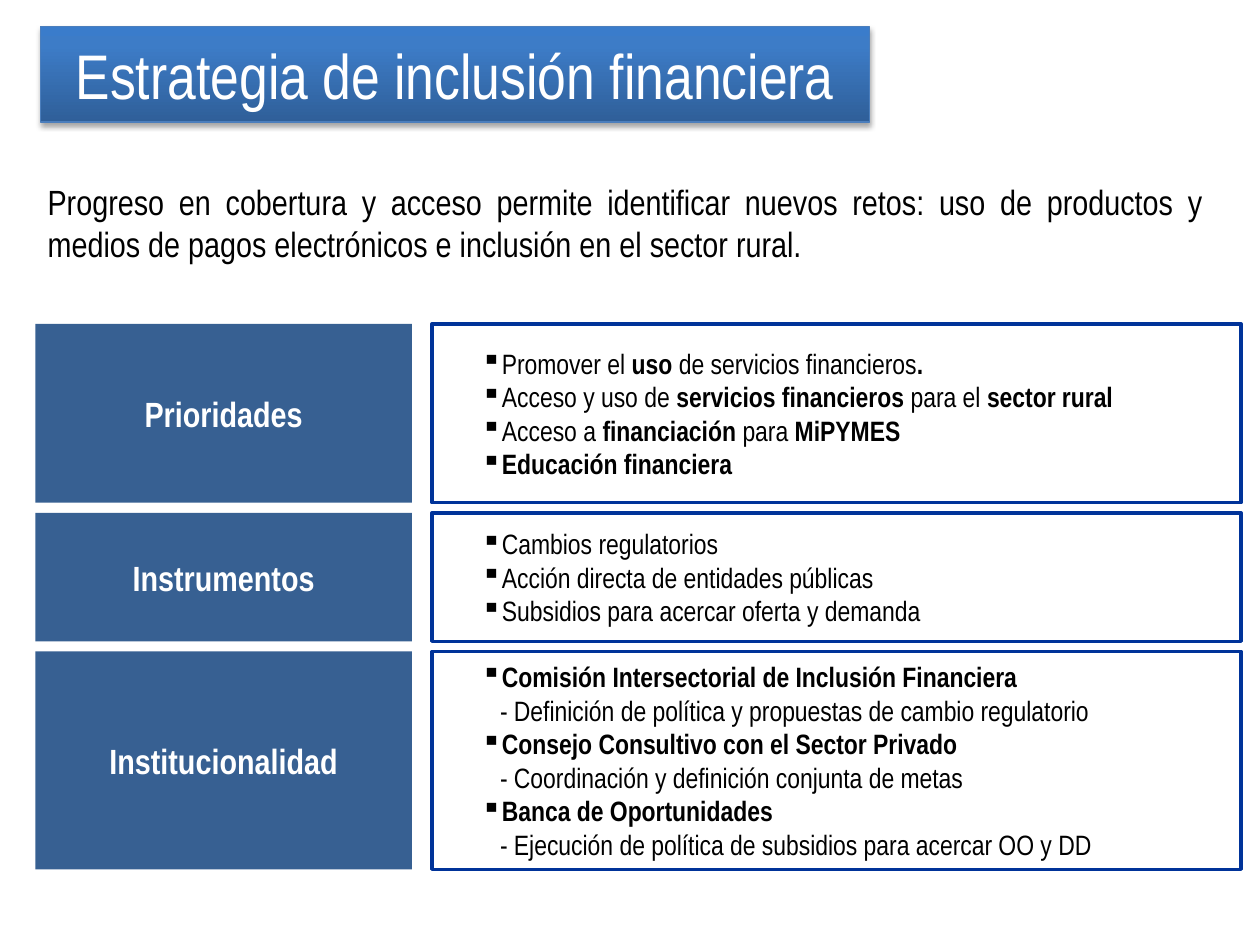
"""Build the slide on the financial inclusion strategy."""
from copy import deepcopy

from pptx import Presentation, util as u
from pptx.dml.color import RGBColor
from pptx.enum import shapes, text
from pptx.oxml import parse_xml
from pptx.oxml.ns import nsdecls, qn

FONT = "Arial Narrow"
LEFT, LABEL_WIDTH, LIST_LEFT, LIST_WIDTH = 0.28, 2.99, 3.43, 6.42
ROWS_TOP, ROW_GAP = 2.57, 0.08
ROWS = [
    ("Prioridades", 1.42, [
        "Promover el *uso* de servicios financieros*.*",
        "Acceso y uso de *servicios financieros* para el *sector rural*",
        "Acceso a *financiación* para *MiPYMES*",
        "*Educación financiera*",
    ]),
    ("Instrumentos", 1.02, [
        "Cambios regulatorios",
        "Acción directa de entidades públicas",
        "Subsidios para acercar oferta y demanda",
    ]),
    ("Institucionalidad", 1.73, [
        "*Comisión Intersectorial de Inclusión Financiera*",
        "- Definición de política y propuestas de cambio regulatorio",
        "*Consejo Consultivo con el Sector Privado*",
        "- Coordinación y definición conjunta de metas",
        "*Banca de Oportunidades*",
        "- Ejecución de política de subsidios para acercar OO y DD",
    ]),
]


def rgb(value):
    return RGBColor.from_string(value)


def add_block(page, area, lines, size, color, align, fill=None):
    """Add a rectangle whose lines mark bold words with asterisks."""
    box = page.shapes.add_shape(shapes.MSO_SHAPE.RECTANGLE, *map(u.Inches, area))
    box.shadow.inherit = False
    box.line.fill.background()
    if fill:
        box.fill.solid()
        box.fill.fore_color.rgb = rgb(fill)
    else:
        box.fill.background()
    frame = box.text_frame
    frame.word_wrap = True
    frame.vertical_anchor = text.MSO_ANCHOR.MIDDLE
    for number, line in enumerate(lines):
        para = frame.paragraphs[0] if number == 0 else frame.add_paragraph()
        para.alignment = align
        for part, words in enumerate(line.split("*")):
            if words:
                span = para.add_run()
                span.text = words
                span.font.bold = part % 2 == 1
        para.font.name = FONT
        para.font.size = u.Pt(size)
        para.font.color.rgb = rgb(color)
    return box


deck = Presentation()
deck.slide_width, deck.slide_height = u.Inches(10), u.Inches(7.5)
page = deck.slides.add_slide(deck.slide_layouts[6])
CENTER, JUSTIFY = text.PP_ALIGN.CENTER, text.PP_ALIGN.JUSTIFY

top = ROWS_TOP
for label, height, items in ROWS:
    panel = add_block(page, (LIST_LEFT, top, LIST_WIDTH, height), items,
                      16, "000000", JUSTIFY, "FFFFFF")
    panel.line.color.rgb = rgb("003399")
    panel.line.width = u.Pt(2)
    for para, item in zip(panel.text_frame.paragraphs, items):
        props = para._p.get_or_add_pPr()
        if item.startswith("-"):
            props.set("marL", str(u.Inches(0.44)))
            continue
        props.set("marL", str(u.Inches(0.41)))
        props.set("indent", str(u.Inches(-0.12)))
        bullet = parse_xml(f'<a:buChar {nsdecls("a")} char="▪"/>')
        props.insert_element_before(bullet, "a:tabLst", "a:defRPr", "a:extLst")
    add_block(page, (LEFT, top, LABEL_WIDTH, height), [f"*{label}*"],
              20, "FFFFFF", CENTER, "376092")
    top += height + ROW_GAP

add_block(page, (LEFT, 1.2, 9.37, 1.13), [
    "Progreso en cobertura y acceso permite identificar nuevos retos: uso de "
    "productos y medios de pagos electrónicos e inclusión en el sector rural."
], 20, "000000", JUSTIFY)

title = add_block(page, (0.32, 0.21, 6.58, 0.76),
                  ["Estrategia de inclusión financiera"], 36, "FFFFFF", CENTER)
title.line.color.rgb = rgb("4B7EBC")
title.line.width = u.Pt(0.75)
title.fill.gradient()
title.fill.gradient_angle = 90
stops = title._element.spPr.find(".//" + qn("a:gsLst"))
stops.append(deepcopy(stops[-1]))
gradient = [(0, "2F5F99"), (0.8, "3D7CC7"), (1, "3A7CCB")]
for stop, (position, color) in zip(title.fill.gradient_stops, gradient):
    stop.position = position
    stop.color.rgb = rgb(color)
title._element.spPr.find(qn("a:effectLst")).append(parse_xml(
    f'<a:outerShdw {nsdecls("a")} blurRad="{u.Pt(3.1)}" dist="{u.Pt(1.8)}" '
    'dir="5400000" rotWithShape="0"><a:srgbClr val="000000">'
    '<a:alpha val="35000"/></a:srgbClr></a:outerShdw>'))

deck.save("out.pptx")
